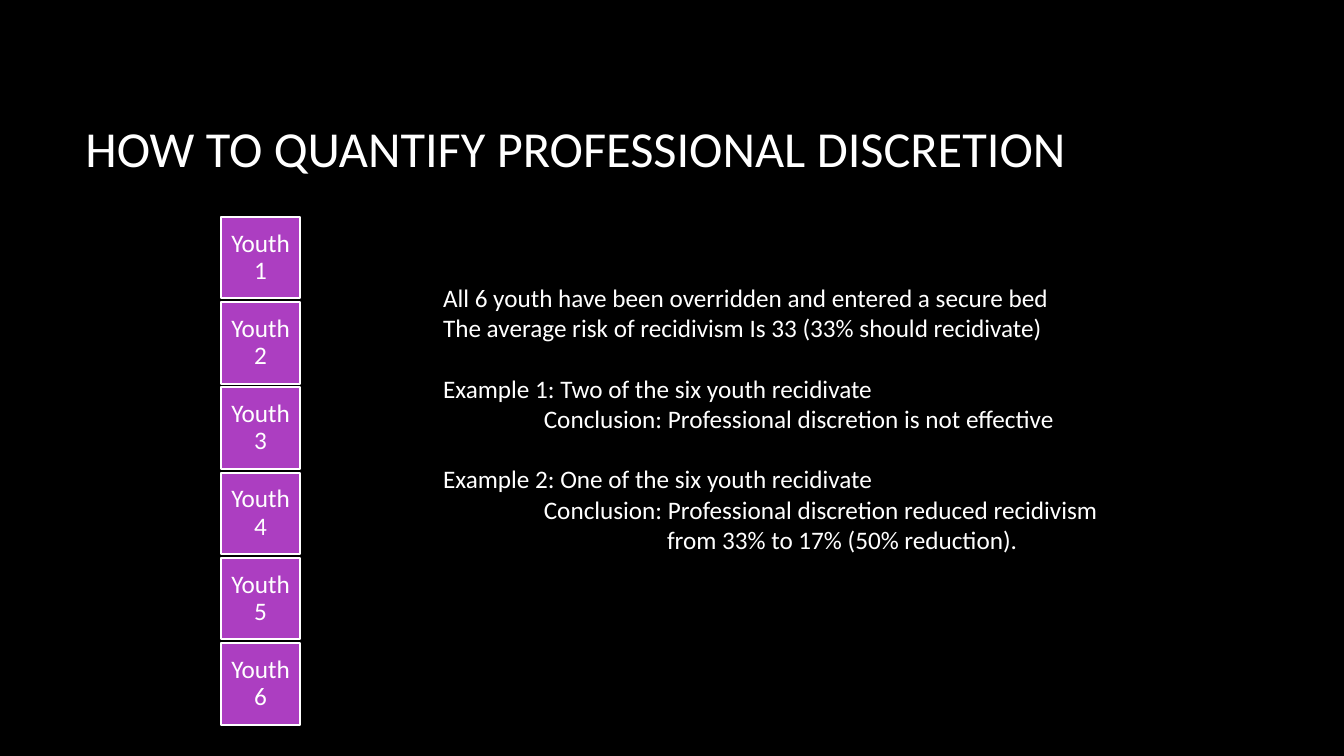
from pptx import Presentation
from pptx.dml.color import RGBColor
from pptx.enum.shapes import MSO_SHAPE
from pptx.enum.text import MSO_ANCHOR, PP_ALIGN
from pptx.util import Pt

WHITE = "FFFFFF"
PURPLE = "AC3EC1"


def color(hex_string):
    return RGBColor.from_string(hex_string)


def write(paragraph, text, size=18, **formats):
    """Fill a paragraph with white Calibri text and apply paragraph formats."""
    paragraph.text = text
    for name, value in formats.items():
        setattr(paragraph, name, value)
    for name, value in {"name": "Calibri", "size": Pt(size)}.items():
        setattr(paragraph.font, name, value)
    paragraph.font.color.rgb = color(WHITE)


presentation = Presentation()
presentation.slide_width = Pt(960)
presentation.slide_height = Pt(540)
slide = presentation.slides.add_slide(presentation.slide_layouts[6])
slide.background.fill.solid()
slide.background.fill.fore_color.rgb = color("000000")

# Title
title = slide.shapes.add_textbox(Pt(54), Pt(48.2), Pt(798), Pt(114.5))
title.text_frame.word_wrap = True
title.text_frame.vertical_anchor = MSO_ANCHOR.MIDDLE
write(title.text_frame.paragraphs[0], "HOW TO QUANTIFY PROFESSIONAL DISCRETION", 36)

# Column of youth boxes
for index in range(6):
    box = slide.shapes.add_shape(
        MSO_SHAPE.RECTANGLE, Pt(157.7), Pt(154.9 + index * 60.9), Pt(56.9), Pt(58.2)
    )
    box.shadow.inherit = False
    box.fill.solid()
    box.fill.fore_color.rgb = color(PURPLE)
    box.line.color.rgb = color(WHITE)
    box.line.width = Pt(1.5)
    frame = box.text_frame
    frame.word_wrap = True
    frame.vertical_anchor = MSO_ANCHOR.MIDDLE
    for side in ("left", "right", "top", "bottom"):
        setattr(frame, f"margin_{side}", Pt(3.6))
    write(frame.paragraphs[0], f"Youth {index + 1}",
          alignment=PP_ALIGN.CENTER, line_spacing=0.9)

# Explanation: text, left indent and space before in points
explanation = [
    ("All 6 youth have been overridden and entered a secure bed", 0, 0),
    ("The average risk of recidivism Is 33 (33% should recidivate)", 0, 0),
    ("Example 1: Two of the six youth recidivate", 0, 21.6),
    ("Conclusion: Professional discretion is not effective", 72, 0),
    ("Example 2: One of the six youth recidivate", 0, 21.6),
    ("Conclusion: Professional discretion reduced recidivism", 72, 0),
    ("from 33% to 17% (50% reduction).", 160, 0),
]
body = slide.shapes.add_textbox(Pt(309.4), Pt(198), Pt(487.4), Pt(203.8))
body.text_frame.word_wrap = True
for index, (text, indent, space) in enumerate(explanation):
    paragraphs = body.text_frame.paragraphs
    paragraph = body.text_frame.add_paragraph() if index else paragraphs[0]
    write(paragraph, text, space_before=Pt(space))
    paragraph._p.get_or_add_pPr().set("marL", str(Pt(indent)))

presentation.save("out.pptx")
